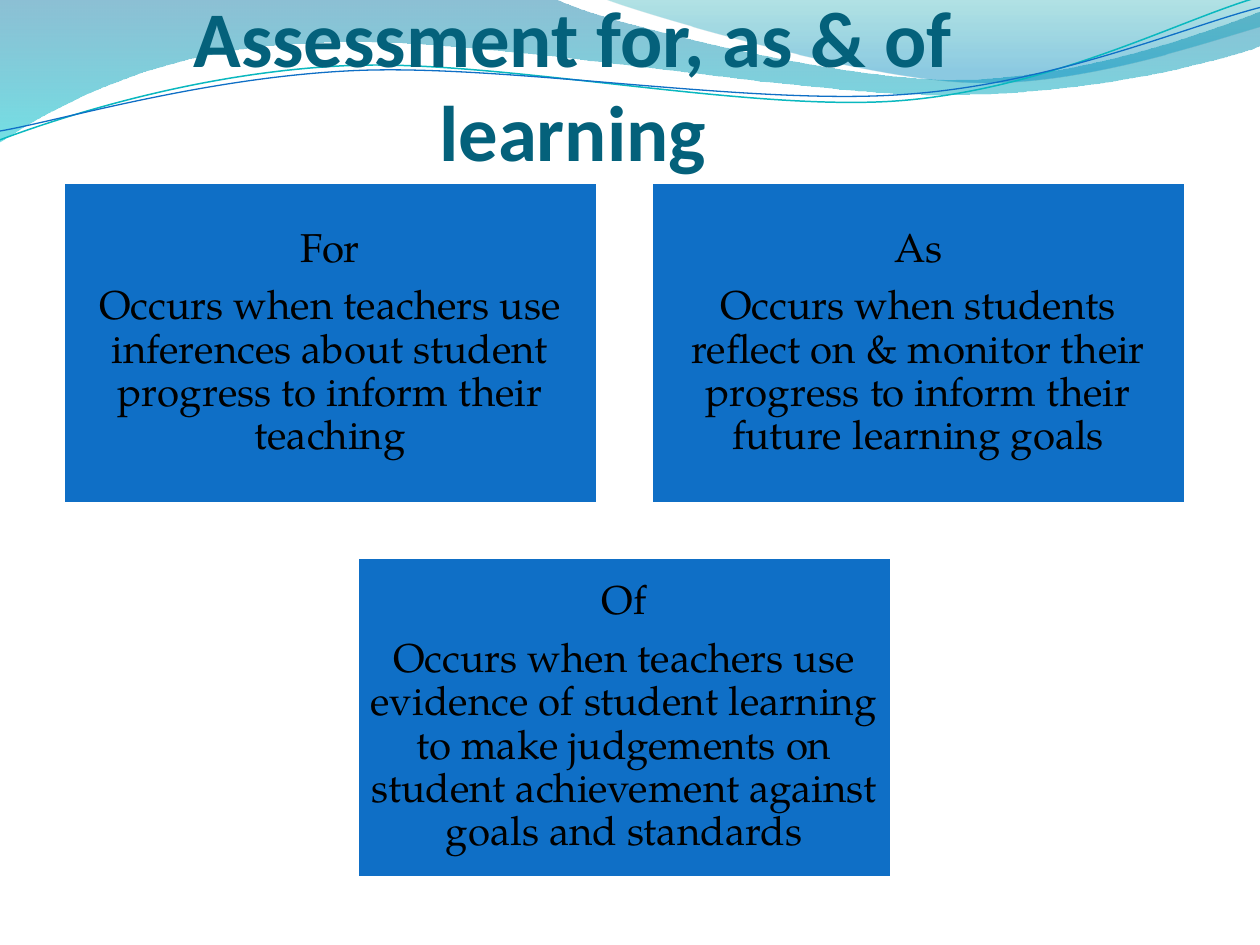
from math import cos, radians, sin

from lxml import etree
from pptx import Presentation
from pptx.dml.color import RGBColor
from pptx.enum.shapes import MSO_SHAPE
from pptx.enum.text import MSO_ANCHOR, MSO_AUTO_SIZE, PP_ALIGN
from pptx.oxml.ns import qn
from pptx.util import Inches, Pt

RECTANGLE = MSO_SHAPE.RECTANGLE
MIDDLE, BOTTOM = MSO_ANCHOR.MIDDLE, MSO_ANCHOR.BOTTOM
CENTER = PP_ALIGN.CENTER
NO_AUTOFIT = MSO_AUTO_SIZE.NONE
TITLE_ONLY = 5
CURVE_TILT = 2.7

COLORS = {
    "title": "04617B", "card": "0F6FC6", "card_line": "FFFFFF", "text": "000000",
    "teal_line": "0AB8BF", "blue_line": "0F6FC6",
    "deep_blue": "0074A1", "cyan": "00C6CF", "teal": "00A1A9", "sky": "008BBF",
}

LARGE_WAVE = [
    (0, 0), (4.4, -0.01),
    (4.76, 0.17, 6.64, 0.63, 7.58, 0.63), (8.53, 0.63, 9.58, 0.26, 10, 0.09),
    (10.01, 0.36),
    (9.83, 0.44, 8.7, 0.76, 7.46, 0.75), (6.22, 0.75, 3.82, 0.28, 2.57, 0.34),
    (1.29, 0.36, 0.46, 0.83, -0.01, 1.13), (0, 0),
]
SMALL_WAVE = [
    (4.79, -0.01),
    (5.09, 0.11, 6.82, 0.62, 7.69, 0.65), (8.56, 0.69, 9.61, 0.32, 10, 0.21),
    (10, 0), (4.79, -0.01),
]
TEAL_CURVE = [
    (0, 1.11),
    (0.48, 0.93, 1.58, 0.57, 2.77, 0.52), (3.95, 0.47, 5.93, 0.89, 7.13, 0.8),
    (8.33, 0.71, 9.38, 0.15, 9.98, -0.02),
]
BLUE_CURVE = [
    (0, 1.04),
    (0.47, 0.96, 1.64, 0.61, 2.83, 0.56), (4.03, 0.51, 5.97, 0.84, 7.17, 0.75),
    (8.36, 0.67, 9.41, 0.21, 10, 0.06),
]

CARDS_LEFT, CARDS_TOP, CARDS_WIDTH = 0.5, 1.45, 8.91
CARD_WIDTH = CARDS_WIDTH / 2.1
CARD_HEIGHT, CARD_GAP = CARD_WIDTH * 0.6, CARD_WIDTH * 0.1
CARDS = [
    (0, 0, "For", "Occurs when teachers use inferences about student progress "
                  "to inform their teaching"),
    (1, 0, "As", "Occurs when students reflect on & monitor their progress "
                 "to inform their future learning goals"),
    (0.5, 1, "Of", "Occurs when teachers use evidence of student learning to make "
                   "judgements on student achievement against goals and standards"),
]


def color(name):
    """Return the named palette colour."""
    return RGBColor.from_string(COLORS[name])


def turn(step, center, degrees):
    """Rotate every point of a step clockwise around a center."""
    c, s = cos(radians(degrees)), sin(radians(degrees))
    turned = []
    for x, y in zip(step[::2], step[1::2]):
        dx, dy = x - center[0], y - center[1]
        turned += [center[0] + dx * c - dy * s, center[1] + dx * s + dy * c]
    return tuple(turned)


class WavePage:
    """Holds the text style and the current slide."""

    title_font, title_size = "Calibri", Pt(45)
    body_font, body_size = "TeX Gyre Pagella", Pt(23)

    def __init__(self, deck):
        """Add a title-only slide to the deck."""
        self.page = deck.slides.add_slide(deck.slide_layouts[TITLE_ONLY])

    def outline(self, steps, closed):
        """Draw a freeform of straight steps and cubic Bezier steps."""
        start, *rest = [
            (Inches(x), Inches(y))
            for step in steps for x, y in zip(step[::2], step[1::2])]
        builder = self.page.shapes.build_freeform(*start)
        builder.add_line_segments(rest, close=closed)
        shape = builder.convert_to_shape()
        shape.shadow.inherit = False
        segments = iter(list(shape.element.iter(qn("a:lnTo"))))
        for step in steps[1:]:
            first = next(segments)
            if len(step) == 6:
                first.tag = qn("a:cubicBezTo")
                for _ in range(2):
                    extra = next(segments)
                    first.append(extra[0])
                    extra.getparent().remove(extra)
        return shape

    def wave(self, steps, stops):
        """Draw a band with a translucent gradient running downwards."""
        shape = self.outline(steps, True)
        shape.line.fill.background()
        shape.fill.gradient()
        shape.fill.gradient_angle = 270
        for stop, (position, name, _) in zip(shape.fill.gradient_stops, stops):
            stop.position = position
            stop.color.rgb = color(name)
        tints = shape.element.spPr.iter(qn("a:srgbClr"))
        for tint, (_, _, opacity) in zip(tints, stops):
            etree.SubElement(tint, qn("a:alpha")).set("val", str(opacity * 1000))

    def curve(self, steps, center, name, width):
        """Draw an open curved line in a tilted frame."""
        level = [turn(step, center, CURVE_TILT) for step in steps]
        shape = self.outline(level, False)
        shape.rotation = -CURVE_TILT
        shape.fill.background()
        shape.line.color.rgb = color(name)
        shape.line.width = Pt(width)

    def format_span(self, span, font, size, name, bold=False):
        """Set the font of one run."""
        span.font.name, span.font.size, span.font.bold = font, size, bold
        span.font.color.rgb = color(name)

    def title(self, text, left, top, width, height):
        """Fill and place the title in front of the waves."""
        box = self.page.shapes.title
        self.page.shapes.element.append(box.element)
        box.left, box.top = Inches(left), Inches(top)
        box.width, box.height = Inches(width), Inches(height)
        frame = box.text_frame
        frame.text = text
        frame.auto_size = NO_AUTOFIT
        frame.word_wrap = True
        frame.vertical_anchor = BOTTOM
        frame.margin_left = frame.margin_right = frame.margin_bottom = 0
        frame.margin_top = Inches(0.05)
        para = frame.paragraphs[0]
        para.alignment = CENTER
        self.format_span(para.runs[0], self.title_font, self.title_size, "title", True)

    def card(self, column, row, heading, body):
        """Draw a filled rectangle with a heading and a body at a grid place."""
        box = self.page.shapes.add_shape(
            RECTANGLE,
            Inches(CARDS_LEFT + column * (CARD_WIDTH + CARD_GAP)),
            Inches(CARDS_TOP + row * (CARD_HEIGHT + CARD_GAP)),
            Inches(CARD_WIDTH), Inches(CARD_HEIGHT))
        box.shadow.inherit = False
        box.fill.solid()
        box.fill.fore_color.rgb = color("card")
        box.line.color.rgb = color("card_line")
        box.line.width = Pt(2)
        frame = box.text_frame
        frame.text = f"{heading}\n{body}"
        frame.word_wrap = True
        frame.vertical_anchor = MIDDLE
        frame.margin_left = frame.margin_right = Inches(0.1)
        frame.margin_top = frame.margin_bottom = Inches(0.1)
        for para in frame.paragraphs:
            para.alignment = CENTER
            para.line_spacing = 0.9
            para.space_after = Pt(8)
            self.format_span(para.runs[0], self.body_font, self.body_size, "text")


def main():
    """Build the slide and save it."""
    deck = Presentation()
    deck.slide_width, deck.slide_height = Inches(10), Inches(7.5)
    slide = WavePage(deck)
    slide.wave(LARGE_WAVE, [(0, "deep_blue", 45), (1, "cyan", 55)])
    slide.wave(SMALL_WAVE, [(0, "teal", 30), (0.8, "sky", 45)])
    slide.curve(TEAL_CURVE, (4.99, 0.58), "teal_line", 0.85)
    slide.curve(BLUE_CURVE, (5, 0.59), "blue_line", 0.75)
    slide.title("Assessment for, as & of learning", 0.42, 0, 8.25, 1.41)
    for card in CARDS:
        slide.card(*card)
    deck.save("out.pptx")


if __name__ == "__main__":
    main()
